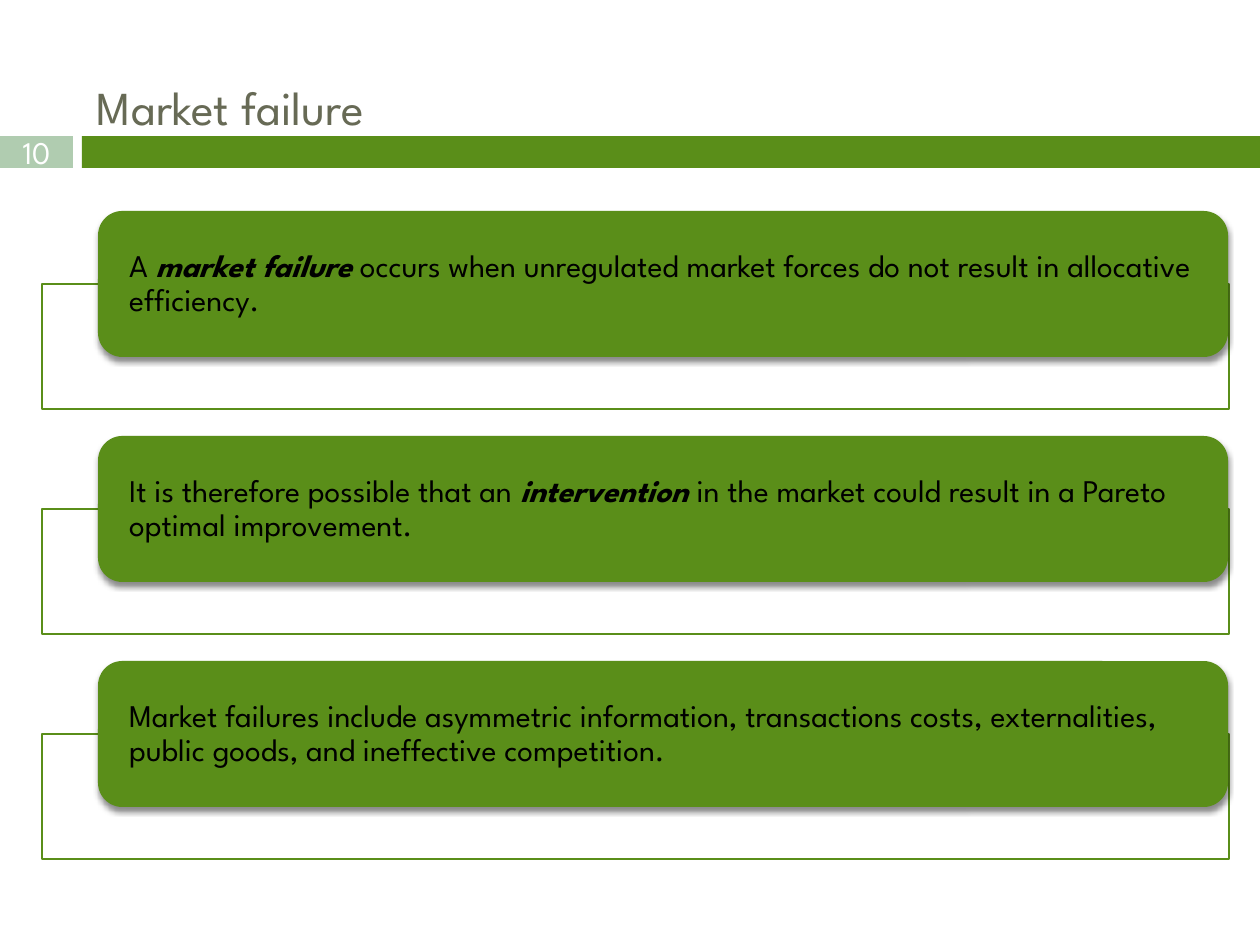
from lxml import etree
from pptx import Presentation
from pptx.dml.color import RGBColor
from pptx.enum.shapes import MSO_SHAPE
from pptx.enum.text import MSO_ANCHOR, PP_ALIGN
from pptx.oxml import parse_xml
from pptx.oxml.ns import qn
from pptx.util import Emu, Pt

RECT, ROUNDED = MSO_SHAPE.RECTANGLE, MSO_SHAPE.ROUNDED_RECTANGLE
MIDDLE = MSO_ANCHOR.MIDDLE
LEFT, CENTER = PP_ALIGN.LEFT, PP_ALIGN.CENTER
SCALE = 914400 / 126

THEME = {
    "font": "League Spartan",
    "green": RGBColor(0x5A, 0x8E, 0x19),
    "sage": RGBColor(0xB0, 0xCC, 0xB0),
    "title": RGBColor(0x67, 0x6A, 0x55),
    "white": RGBColor(0xFF, 0xFF, 0xFF),
    "black": RGBColor(0, 0, 0),
    "title_size": Pt(27),
    "body_size": Pt(18),
}

SHADOW = (
    '<a:effectLst xmlns:a="http://schemas.openxmlformats.org/drawingml/2006/main">'
    '<a:outerShdw blurRad="38100" dist="30480" dir="5400000" rotWithShape="0">'
    '<a:srgbClr val="000000"><a:alpha val="45000"/></a:srgbClr>'
    "</a:outerShdw></a:effectLst>"
)


def add_block(kind, box, color):
    block = slide.shapes.add_shape(kind, *(Emu(round(n * SCALE)) for n in box))
    block.shadow.inherit = False
    block.fill.solid()
    block.fill.fore_color.rgb = color
    block.line.fill.background()
    return block


def write(holder, runs, size, color, align, inset):
    frame = holder.text_frame
    frame.word_wrap = True
    frame.vertical_anchor = MIDDLE
    frame.margin_left = frame.margin_right = Emu(round(inset * SCALE))
    frame.margin_top = frame.margin_bottom = 0
    paragraph = frame.paragraphs[0]
    paragraph.alignment = align
    paragraph.font.name = THEME["font"]
    paragraph.font.size = size
    paragraph.font.color.rgb = color
    for text, emphasis in runs:
        run = paragraph.add_run()
        run.text = text
        if emphasis:
            run.font.bold = run.font.italic = True
    return paragraph


prs = Presentation()
prs.slide_width, prs.slide_height = Emu(round(1260 * SCALE)), Emu(round(945 * SCALE))
slide = prs.slides.add_slide(prs.slide_layouts[6])

page_number = add_block(RECT, (0, 136, 73, 32), THEME["sage"])
write(page_number, [("10", False)], THEME["body_size"], THEME["white"], CENTER, 0)
add_block(RECT, (82, 136, 1178, 32), THEME["green"])

title = slide.shapes.add_textbox(*(Emu(round(n * SCALE)) for n in (84, 66, 1302, 82)))
write(title, [("Market failure", False)], THEME["title_size"], THEME["title"], LEFT, 13)

statements = [
    [
        ("A ", False),
        ("market failure", True),
        (" occurs when unregulated market forces do not result in allocative efficiency.", False),
    ],
    [
        ("It is therefore possible that an ", False),
        ("intervention ", True),
        ("in the market could result in a Pareto optimal improvement.", False),
    ],
    [
        ("Market failures include asymmetric information, transactions costs, "
         "externalities, public goods, and ineffective competition.", False),
    ],
]

for row, statement in enumerate(statements):
    top = 211 + 225 * row
    bracket = add_block(RECT, (42, top + 73, 1187, 125), THEME["white"])
    bracket.line.color.rgb = THEME["green"]
    bracket.line.width = Pt(0.79)
    bracket_color = bracket.fill._xPr.find(qn("a:solidFill"))[0]
    etree.SubElement(bracket_color, qn("a:alpha")).set("val", "90000")

    card = add_block(ROUNDED, (98, top, 1130, 146), THEME["green"])
    properties = card._element.spPr
    properties.replace(properties.find(qn("a:effectLst")), parse_xml(SHADOW))
    body = write(card, statement, THEME["body_size"], THEME["black"], LEFT, 24)
    body.line_spacing = 0.9

prs.save("out.pptx")
